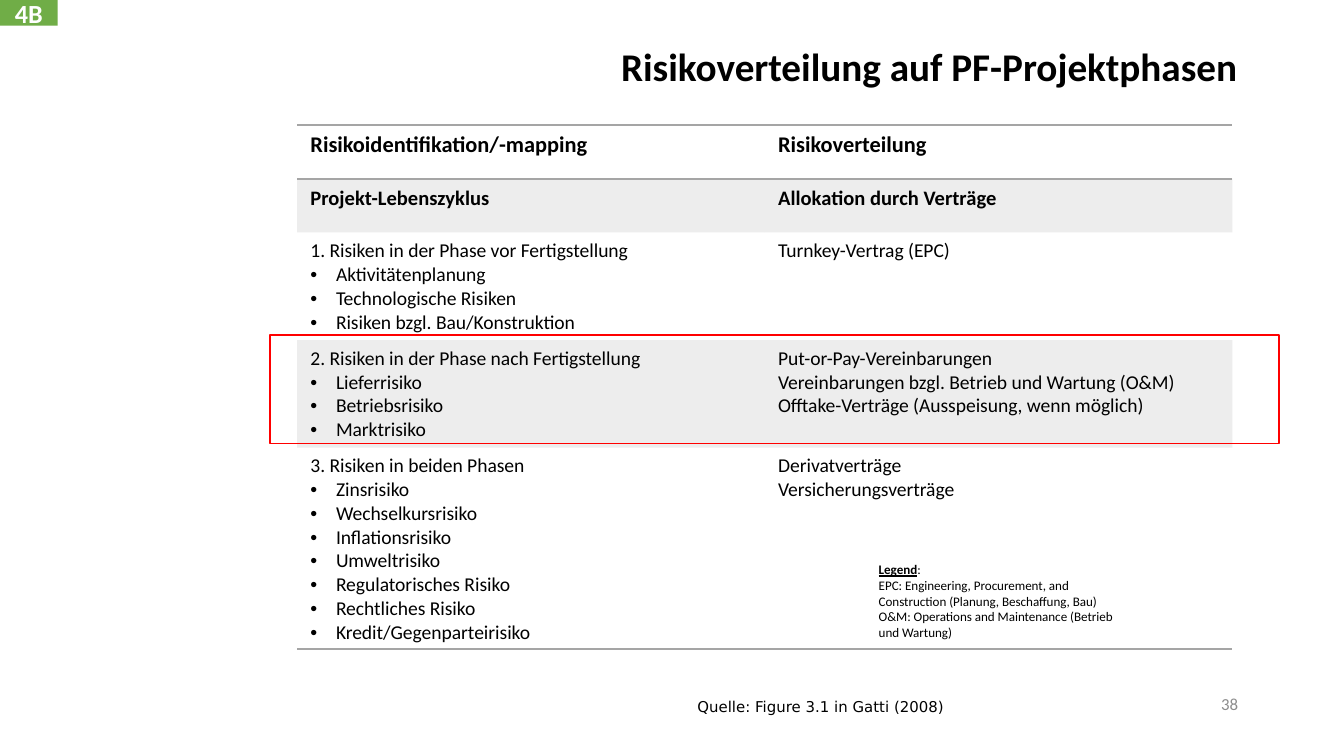
from dataclasses import dataclass
from typing import Optional

from lxml import etree
from pptx import Presentation
from pptx import util as u
from pptx.dml.color import RGBColor
from pptx.enum import shapes, text
from pptx.oxml import ns

BLACK, GREY, GREEN, RED, WHITE = "000000", "A5A5A5", "70AD47", "FF0000", "FFFFFF"
LEFT, CENTER, RIGHT = text.PP_ALIGN.LEFT, text.PP_ALIGN.CENTER, text.PP_ALIGN.RIGHT
TOP, MIDDLE = text.MSO_ANCHOR.TOP, text.MSO_ANCHOR.MIDDLE


@dataclass
class Style:
    size: float
    color: str = BLACK
    bold: bool = False
    font: str = "Calibri"
    align: int = LEFT


@dataclass
class Row:
    height: float
    style: Style
    heading: str
    contracts: list[str]
    risks: tuple[str, ...] = ()
    shaded: bool = False
    borders: tuple[str, ...] = ()


HEADER = Style(12, bold=True)
SUBHEADER = Style(11, bold=True)
BODY = Style(10.5)

ROWS = [
    Row(0.4, HEADER, "Risikoidentifikation/-mapping", ["Risikoverteilung"],
        borders=("lnT", "lnB")),
    Row(0.4, SUBHEADER, "Projekt-Lebenszyklus", ["Allokation durch Verträge"], shaded=True),
    Row(0.8, BODY, "1. Risiken in der Phase vor Fertigstellung", ["Turnkey-Vertrag (EPC)"],
        ("Aktivitätenplanung", "Technologische Risiken", "Risiken bzgl. Bau/Konstruktion")),
    Row(0.8, BODY, "2. Risiken in der Phase nach Fertigstellung",
        ["Put-or-Pay-Vereinbarungen", "Vereinbarungen bzgl. Betrieb und Wartung (O&M)",
         "Offtake-Verträge (Ausspeisung, wenn möglich)"],
        ("Lieferrisiko", "Betriebsrisiko", "Marktrisiko"), shaded=True),
    Row(1.5, BODY, "3. Risiken in beiden Phasen", ["Derivatverträge", "Versicherungsverträge"],
        ("Zinsrisiko", "Wechselkursrisiko", "Inflationsrisiko", "Umweltrisiko",
         "Regulatorisches Risiko", "Rechtliches Risiko", "Kredit/Gegenparteirisiko"),
        borders=("lnB",)),
]


def rgb(color: str) -> RGBColor:
    return RGBColor.from_string(color)


def box(*lengths: float) -> list[u.Length]:
    return [u.Inches(length) for length in lengths]


def write(frame, lines: list[str], style: Style) -> None:
    frame.text = "\n".join(lines)
    for paragraph in frame.paragraphs:
        paragraph.alignment = style.align
        for run in paragraph.runs:
            run.font.name, run.font.size = style.font, u.Pt(style.size)
            run.font.bold = style.bold
            run.font.color.rgb = rgb(style.color)


def add_text(slide, place: list[u.Length], lines: list[str], style: Style, anchor=TOP):
    frame = slide.shapes.add_textbox(*place).text_frame
    frame.word_wrap = True
    frame.vertical_anchor = anchor
    write(frame, lines, style)
    return frame


def add_rect(slide, place: list[u.Length], fill: Optional[str] = None,
             line: Optional[str] = None):
    rect = slide.shapes.add_shape(shapes.MSO_SHAPE.RECTANGLE, *place)
    rect.shadow.inherit = False
    if fill:
        rect.fill.solid()
        rect.fill.fore_color.rgb = rgb(fill)
    else:
        rect.fill.background()
    if line:
        rect.line.color.rgb = rgb(line)
        rect.line.width = u.Pt(1)
    else:
        rect.line.fill.background()
    return rect


def add_bullet(paragraph) -> None:
    properties = paragraph._p.get_or_add_pPr()
    indent = u.Inches(0.19)
    properties.set("marL", str(indent))
    properties.set("indent", str(-indent))
    etree.SubElement(properties, ns.qn("a:buFont"), typeface="Arial")
    etree.SubElement(properties, ns.qn("a:buChar"), char="•")


def format_cell(cell, row: Row) -> None:
    properties = cell._tc.get_or_add_tcPr()
    if row.shaded:
        cell.fill.solid()
        cell.fill.fore_color.rgb = rgb(GREY)
        color = properties.find(".//" + ns.qn("a:srgbClr"))
        etree.SubElement(color, ns.qn("a:alpha"), val="20000")
    else:
        cell.fill.background()
    for position, side in enumerate(row.borders):
        border = etree.Element(ns.qn(f"a:{side}"), w=str(u.Pt(1)))
        solid = etree.SubElement(border, ns.qn("a:solidFill"))
        etree.SubElement(solid, ns.qn("a:srgbClr"), val=GREY)
        properties.insert(position, border)


def add_risk_table(slide) -> None:
    height = sum(row.height for row in ROWS)
    frame = slide.shapes.add_table(len(ROWS), 2, *box(2.21, 0.93, 6.96, height))
    table = frame.table
    table.first_row = table.horz_banding = False
    # Plain table style without grid
    style_id = table._tbl.tblPr.find(ns.qn("a:tableStyleId"))
    style_id.text = "{2D5ABB26-0587-4C30-8999-92F81FD0307C}"
    for index, row in enumerate(ROWS):
        table.rows[index].height = u.Inches(row.height)
        risk_cell, contract_cell = table.rows[index].cells
        write(risk_cell.text_frame, [row.heading, *row.risks], row.style)
        for paragraph in risk_cell.text_frame.paragraphs[1:]:
            add_bullet(paragraph)
        write(contract_cell.text_frame, row.contracts, row.style)
        for cell in (risk_cell, contract_cell):
            format_cell(cell, row)


def main() -> None:
    # Widescreen deck, 16:9
    deck = Presentation()
    deck.slide_width, deck.slide_height = box(10, 10 * 9 / 16)
    slide = deck.slides.add_slide(deck.slide_layouts[5])

    # Title
    title = slide.shapes.title
    title.left, title.top, title.width, title.height = box(0.69, 0.3, 8.62, 0.43)
    title.text_frame.vertical_anchor = MIDDLE
    write(title.text_frame, ["Risikoverteilung auf PF-Projektphasen"],
          Style(21, bold=True, align=RIGHT))
    title.text_frame.paragraphs[0].line_spacing = 0.9

    # Source and page number
    add_text(slide, box(5.09, 5.14, 2.21, 0.24), ["Quelle: Figure 3.1 in Gatti (2008)"],
             Style(8, font="DejaVu Sans"))
    add_text(slide, box(7.06, 5.09, 2.25, 0.3), ["38"],
             Style(9, "8C8C8C", align=RIGHT), MIDDLE)

    # Chapter tag
    tag = add_rect(slide, box(0, 0, 0.43, 0.19), fill=GREEN)
    tag.text_frame.word_wrap = False
    tag.text_frame.vertical_anchor = MIDDLE
    write(tag.text_frame, ["4B"], Style(14, WHITE, bold=True, align=CENTER))

    # Risk table with the highlighted phase
    add_risk_table(slide)
    add_rect(slide, box(2.01, 2.49, 7.51, 0.81), line=RED)

    # Legend
    legend = add_text(slide, box(6.44, 4.01, 2.03, 0.93), [
        "Legend",
        "EPC: Engineering, Procurement, and Construction (Planung, Beschaffung, Bau)",
        "O&M: Operations and Maintenance (Betrieb und Wartung)"], Style(7))
    legend.margin_top = u.Inches(0.17)
    heading = legend.paragraphs[0]
    heading.runs[0].font.bold = heading.runs[0].font.underline = True
    colon = heading.add_run()
    colon.text = ":"
    colon.font.name, colon.font.size = "Calibri", u.Pt(7)
    colon.font.color.rgb = rgb(BLACK)

    deck.save("out.pptx")


if __name__ == "__main__":
    main()
